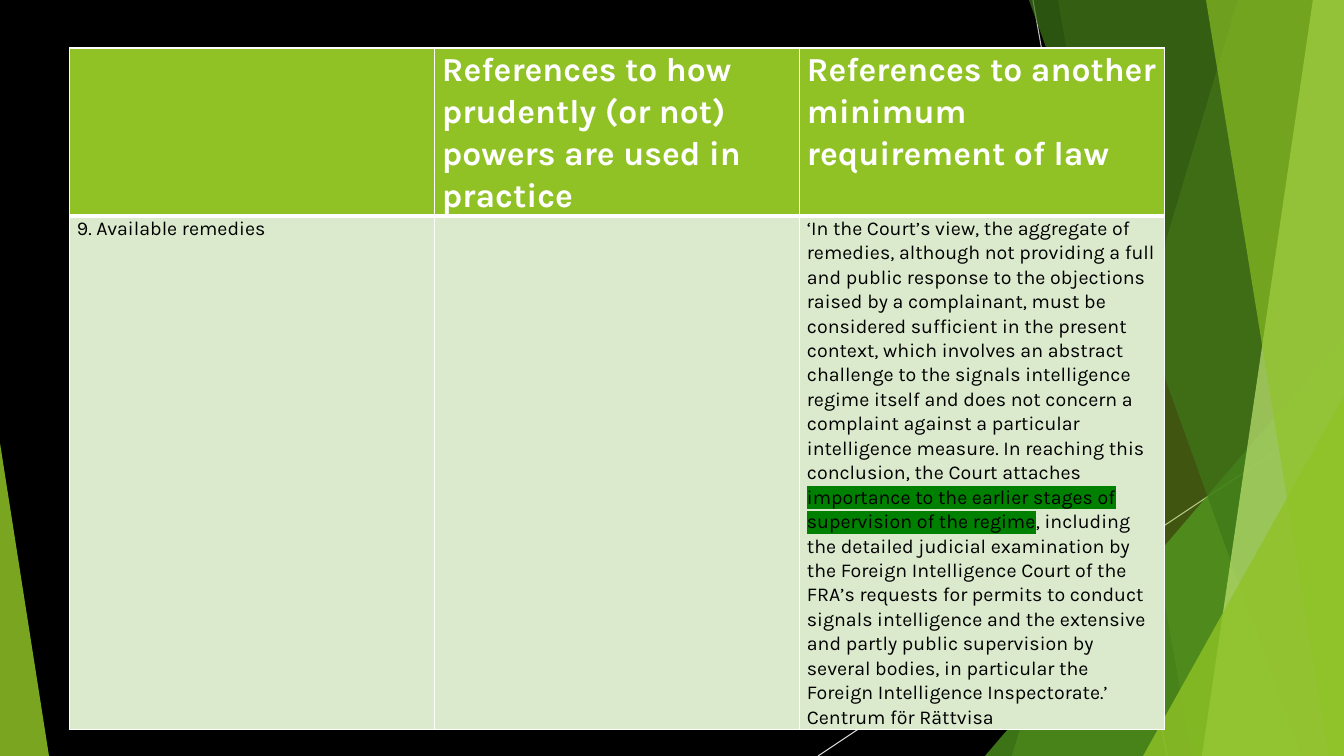
"""Build a slide with a table of legal remedies over green facets."""
from dataclasses import dataclass

from pptx import Presentation
from pptx.dml.color import RGBColor as Rgb
from pptx.enum.shapes import MSO_CONNECTOR as Link, MSO_SHAPE as Kind
from pptx.oxml.ns import qn
from pptx.oxml.xmlchemy import OxmlElement as make
from pptx.util import Pt

SCALE = 914400 / 100.8
WIDE, HIGH = 1344, 756


@dataclass(frozen=True)
class Theme:
    font: str = "Karla"
    head: int = 24
    body: int = 14
    lead: float = 1.07
    black: str = "000000"
    white: str = "FFFFFF"
    green: str = "90C226"
    leaf: str = "54A021"
    moss: str = "3F7819"
    lime: str = "C0E474"
    pale: str = "DBE9CD"
    mark: str = "008000"
    grey: str = "BFBFBF"
    mist: str = "D9D9D9"


LOOK = Theme()

HEADS = ["", "References to how prudently (or not) powers are used in practice",
         "References to another minimum requirement of law"]
QUOTE = [
    ("‘In the Court’s view, the aggregate of remedies, although not providing "
     "a full and public response to the objections raised by a complainant, "
     "must be considered sufficient in the present context, which involves an "
     "abstract challenge to the signals intelligence regime itself and does "
     "not concern a complaint against a particular intelligence measure. In "
     "reaching this conclusion, the Court attaches ", False),
    ("importance to the earlier stages of supervision of the regime", True),
    (", including the detailed judicial examination by the Foreign "
     "Intelligence Court of the FRA’s requests for permits to conduct signals "
     "intelligence and the extensive and partly public supervision by several "
     "bodies, in particular the Foreign Intelligence Inspectorate.’", False),
]
BODY = [[], [[("9. Available remedies", False)]], [],
        [QUOTE, [("Centrum för Rättvisa", False)]]][1:]


def px(size):
    return round(size * SCALE)


def add_line(slide, start, end, tone):
    line = slide.shapes.add_connector(
        Link.STRAIGHT, *map(px, start), *map(px, end))
    line.line.color.rgb = Rgb.from_string(tone)
    line.line.width = Pt(0.75)
    line._element.spPr.append(make("a:effectLst"))


def paint(shape, tone, share):
    shape.shadow.inherit = False
    shape.line.fill.background()
    shape.fill.solid()
    shape.fill.fore_color.rgb = Rgb.from_string(tone)
    alpha = make("a:alpha")
    alpha.set("val", str(share * 1000))
    shape._element.spPr.find(qn("a:solidFill"))[0].append(alpha)


def add_facet(slide, top, base, tone, share):
    pen = slide.shapes.build_freeform(px(top), 0, scale=1.0)
    ends = [(WIDE, 0), (WIDE, HIGH), (base, HIGH)]
    pen.add_line_segments([(px(x), px(y)) for x, y in ends], close=True)
    paint(pen.convert_to_shape(), tone, share)


def add_wedge(slide, left, top, width, peak, tone, share):
    shape = slide.shapes.add_shape(
        Kind.ISOSCELES_TRIANGLE, *map(px, (left, top, width, HIGH - top)))
    shape.adjustments[0] = peak
    paint(shape, tone, share)


def add_run(para, text, size, tone, bold, lit):
    run = para.add_run()
    run.text = text
    font = run.font
    font.size, font.bold = Pt(size), bold
    font.color.rgb = Rgb.from_string(tone)
    if lit:
        glow = make("a:highlight")
        shade = make("a:srgbClr")
        shade.set("val", LOOK.mark)
        glow.append(shade)
        run._r.get_or_add_rPr().append(glow)
    font.name = LOOK.font


def add_edge(cell, side, width):
    edge = make(f"a:ln{side}")
    edge.set("w", str(Pt(width)))
    fill = make("a:solidFill")
    shade = make("a:srgbClr")
    shade.set("val", LOOK.white)
    fill.append(shade)
    edge.append(fill)
    cell._tc.get_or_add_tcPr().append(edge)


def fill_cell(cell, paras, size, tone, back, bold, rims):
    cell.margin_left = cell.margin_right = px(7.5)
    cell.margin_top = cell.margin_bottom = 0
    for side, width in zip("LRTB", rims):
        add_edge(cell, side, width)
    cell.fill.solid()
    cell.fill.fore_color.rgb = Rgb.from_string(back)
    frame = cell.text_frame
    for i, runs in enumerate(paras):
        para = frame.add_paragraph() if i else frame.paragraphs[0]
        para.line_spacing = LOOK.lead
        for text, lit in runs:
            add_run(para, text, size, tone, bold, lit)


def add_grid(slide):
    left, top, col, rows = 69.5, 48, 365, (167, 514)
    grid = slide.shapes.add_table(
        2, 3, px(left), px(top), px(3 * col), px(sum(rows))).table
    for row, high in zip(grid.rows, rows):
        row.height = px(high)
    for i, (head, body) in enumerate(zip(HEADS, BODY)):
        grid.columns[i].width = px(col)
        paras = [[(head, False)]] if head else []
        fill_cell(grid.cell(0, i), paras, LOOK.head, LOOK.white, LOOK.green,
                  True, (1, 1, 1, 3))
        fill_cell(grid.cell(1, i), body, LOOK.body, LOOK.black, LOOK.pale,
                  False, (1, 1, 3, 1))


def main():
    deck = Presentation()
    deck.slide_width, deck.slide_height = px(WIDE), px(HIGH)
    slide = deck.slides.add_slide(deck.slide_layouts[6])
    back = slide.background.fill
    back.solid()
    back.fore_color.rgb = Rgb.from_string(LOOK.black)
    add_line(slide, (1033, 0), (1167, HIGH), LOOK.grey)
    add_line(slide, (WIDE, 406), (818, HIGH), LOOK.mist)
    add_facet(slide, 1238, 1012, LOOK.green, 30)
    add_facet(slide, 1058, 1192, LOOK.green, 20)
    add_wedge(slide, 985, 336, 359, 1, LOOK.leaf, 72)
    add_facet(slide, 1029, 1301, LOOK.moss, 70)
    add_facet(slide, 1313, 1202, LOOK.lime, 70)
    add_facet(slide, 1206, 1329, LOOK.green, 65)
    add_wedge(slide, 1143, 396, 201, 1, LOOK.green, 80)
    add_wedge(slide, 0, 443, 49, 0, LOOK.green, 85)
    add_grid(slide)
    deck.save("out.pptx")


if __name__ == "__main__":
    main()
